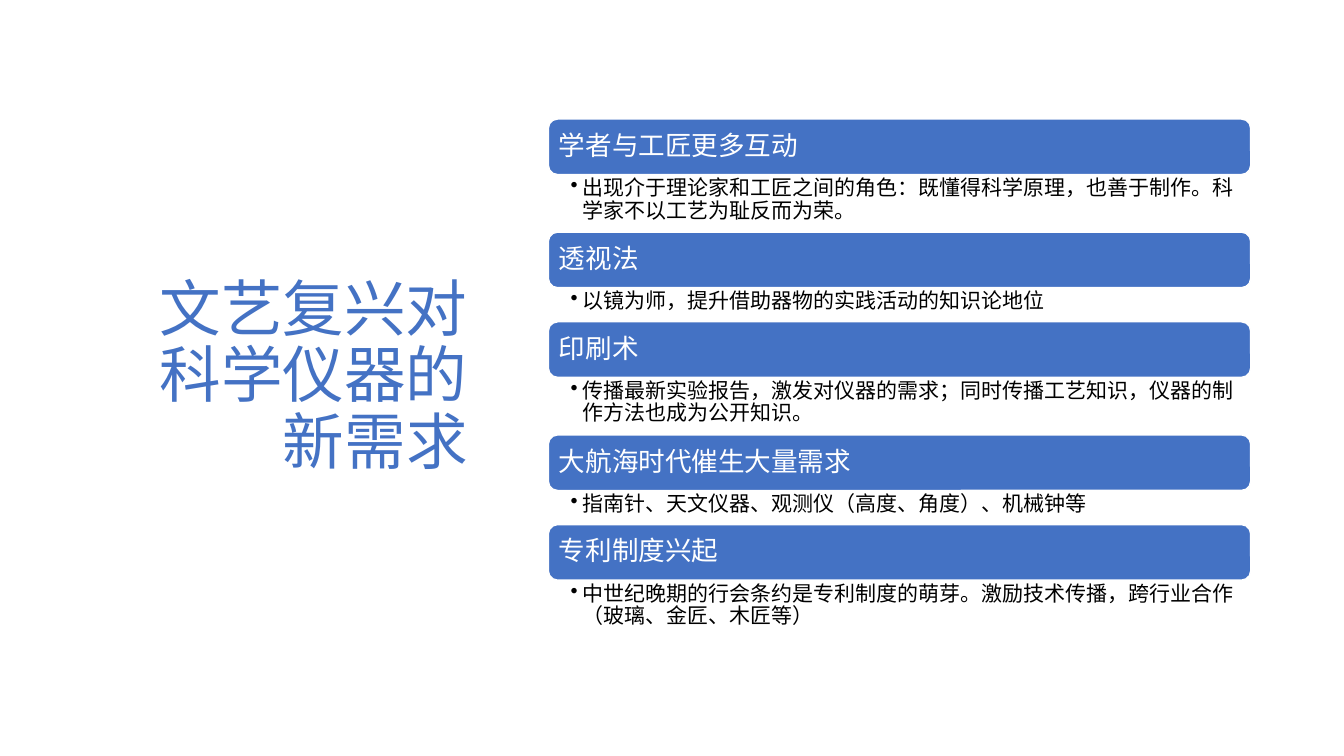
from lxml import etree
from pptx import Presentation
from pptx.dml.color import RGBColor
from pptx.enum import shapes, text
from pptx.oxml.ns import qn
from pptx.util import Cm, Pt

TITLE = "文艺复兴对科学仪器的新需求"
# heading, detail, lines the detail takes
TOPICS = [
    ("学者与工匠更多互动",
     "出现介于理论家和工匠之间的角色：既懂得科学原理，也善于制作。科学家不以工艺为耻反而为荣。", 2),
    ("透视法", "以镜为师，提升借助器物的实践活动的知识论地位", 1),
    ("印刷术",
     "传播最新实验报告，激发对仪器的需求；同时传播工艺知识，仪器的制作方法也成为公开知识。", 2),
    ("大航海时代催生大量需求", "指南针、天文仪器、观测仪（高度、角度）、机械钟等", 1),
    ("专利制度兴起",
     "中世纪晚期的行会条约是专利制度的萌芽。激励技术传播，跨行业合作（玻璃、金匠、木匠等）", 2),
]
COLORS = {"blue": "4472C4", "white": "FFFFFF", "black": "000000"}
FONT = "Noto Sans CJK SC"
LIST_LEFT, LIST_TOP, LIST_WIDTH = 13.82, 3.0, 17.7
HEADING_HEIGHT = 1.4
DETAIL_HEIGHTS = {1: 0.86, 2: 1.45}
BULLET_INDENT = Cm(0.3)


def color(name):
    return RGBColor.from_string(COLORS[name])


def write(shape, words, size, color_name, align, anchor, insets, bullet=False):
    """Fill the shape with one paragraph; insets are left, top, right, bottom in cm."""
    frame = shape.text_frame
    frame.word_wrap = True
    frame.vertical_anchor = anchor
    (frame.margin_left, frame.margin_top,
     frame.margin_right, frame.margin_bottom) = map(Cm, insets)
    paragraph = frame.paragraphs[0]
    if bullet:
        properties = paragraph._p.get_or_add_pPr()
        properties.set("marL", str(BULLET_INDENT))
        properties.set("indent", str(-BULLET_INDENT))
        etree.SubElement(properties, qn("a:buChar"), char="•")
    paragraph.alignment = align
    paragraph.line_spacing = 0.9
    run = paragraph.add_run()
    run.text = words
    run.font.size = Pt(size)
    run.font.name = FONT
    run.font.color.rgb = color(color_name)
    etree.SubElement(run._r.get_or_add_rPr(), qn("a:ea"), typeface=FONT)


def add_heading(slide, words, top):
    bar = slide.shapes.add_shape(
        shapes.MSO_SHAPE.ROUNDED_RECTANGLE,
        Cm(LIST_LEFT), Cm(top), Cm(LIST_WIDTH), Cm(HEADING_HEIGHT))
    bar.shadow.inherit = False
    bar.fill.solid()
    bar.fill.fore_color.rgb = color("blue")
    bar.line.color.rgb = color("white")
    bar.line.width = Pt(1)
    write(bar, words, 19, "white", text.PP_ALIGN.LEFT,
          text.MSO_ANCHOR.MIDDLE, (0.2, 0.2, 0.2, 0.2))


def add_detail(slide, words, top, height):
    box = slide.shapes.add_textbox(
        Cm(LIST_LEFT), Cm(top), Cm(LIST_WIDTH), Cm(height))
    write(box, words, 15, "black", text.PP_ALIGN.LEFT,
          text.MSO_ANCHOR.TOP, (0.56, 0.07, 0.38, 0.07), bullet=True)


def main():
    presentation = Presentation()
    presentation.slide_width, presentation.slide_height = Cm(33.87), Cm(19.05)
    slide = presentation.slides.add_slide(presentation.slide_layouts[6])

    title = slide.shapes.add_textbox(Cm(2.34), Cm(2.67), Cm(9.7), Cm(13.69))
    write(title, TITLE, 44, "blue", text.PP_ALIGN.RIGHT,
          text.MSO_ANCHOR.MIDDLE, (0.25, 0.13, 0.25, 0.13))

    top = LIST_TOP
    for heading, detail, lines in TOPICS:
        add_heading(slide, heading, top)
        top += HEADING_HEIGHT
        add_detail(slide, detail, top, DETAIL_HEIGHTS[lines])
        top += DETAIL_HEIGHTS[lines]

    presentation.save("out.pptx")


if __name__ == "__main__":
    main()
